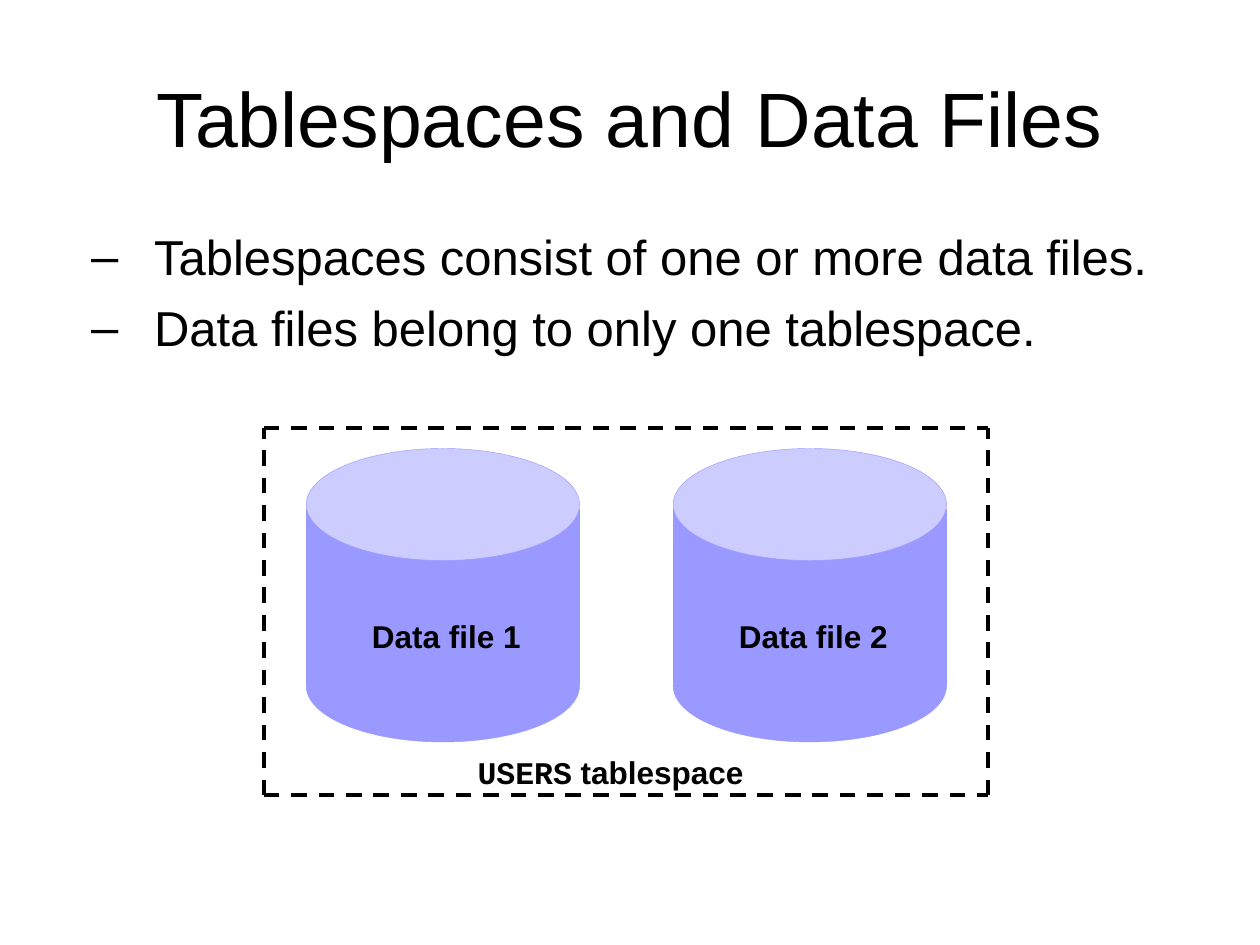
from lxml.etree import SubElement
from pptx import Presentation
from pptx.dml.color import RGBColor
from pptx.enum.dml import MSO_LINE
from pptx.enum.shapes import MSO_CONNECTOR, MSO_SHAPE
from pptx.enum.text import MSO_ANCHOR, PP_ALIGN
from pptx.oxml.ns import qn
from pptx.util import Pt

BLACK, SIDE, LID = "000000", "9999FF", "CCCCFF"
LABEL = {"size": Pt(18), "bold": True}
CYLINDER_WIDTH = 156.2
LABEL_MARGINS = {"margin_left": Pt(4.5), "margin_right": Pt(4.5),
                 "margin_top": Pt(2.2), "margin_bottom": Pt(2.2)}


def rgb(value):
    return RGBColor.from_string(value)


def set_all(target, values):
    for name, value in values.items():
        setattr(target, name, value)


def add_run(paragraph, text, font="Arial", **style):
    run = paragraph.add_run()
    run.text = text
    set_all(run.font, {"name": font, **style})
    run.font.color.rgb = rgb(BLACK)


def place(shape, left, top, width, height):
    set_all(shape, {"left": Pt(left), "top": Pt(top),
                    "width": Pt(width), "height": Pt(height)})


def add_title(slide, text):
    title = slide.shapes.title
    place(title, 36, 21.6, 648, 90)
    title.text_frame.vertical_anchor = MSO_ANCHOR.MIDDLE
    paragraph = title.text_frame.paragraphs[0]
    paragraph.alignment = PP_ALIGN.CENTER
    add_run(paragraph, text, size=Pt(44))


def add_dashed_list(slide, items):
    frame = slide.shapes.add_textbox(Pt(36), Pt(126), Pt(648), Pt(146)).text_frame
    frame.word_wrap = True
    for number, item in enumerate(items):
        paragraph = frame.add_paragraph() if number else frame.paragraphs[0]
        paragraph.space_before = Pt(7)
        properties = paragraph._p.get_or_add_pPr()
        properties.set("marL", str(Pt(45)))
        properties.set("indent", str(Pt(-36)))
        SubElement(properties, qn("a:buFont"), typeface="Arial")
        SubElement(properties, qn("a:buChar"), char="–")
        add_run(paragraph, item, size=Pt(28))


def add_solid(slide, preset, left, top, height, fill):
    part = slide.shapes.add_shape(preset, Pt(left), Pt(top),
                                  Pt(CYLINDER_WIDTH), Pt(height))
    part.shadow.inherit = False
    part.fill.solid()
    part.fill.fore_color.rgb = rgb(fill)
    part.line.color.rgb = rgb(SIDE)
    part.line.width = Pt(0.25)


def add_cylinder(slide, left):
    add_solid(slide, MSO_SHAPE.RECTANGLE, left, 291, 100, SIDE)
    add_solid(slide, MSO_SHAPE.OVAL, left, 256.3, 64, LID)
    add_solid(slide, MSO_SHAPE.OVAL, left, 360, 64, SIDE)


def add_dashed_frame(slide, left, top, right, bottom):
    edges = [(left, bottom, right, bottom), (left, top, right, top),
             (left, bottom, left, top), (right, bottom, right, top)]
    for edge in edges:
        side = slide.shapes.add_connector(MSO_CONNECTOR.STRAIGHT, *map(Pt, edge))
        side.line.color.rgb = rgb(BLACK)
        set_all(side.line, {"width": Pt(2.25), "dash_style": MSO_LINE.DASH})
        SubElement(side._element.spPr, qn("a:effectLst"))


def add_label(slide, left, top, width, *parts):
    """Add a centred bold label from (text, font) parts."""
    frame = slide.shapes.add_textbox(Pt(left), Pt(top), Pt(width), Pt(23)).text_frame
    set_all(frame, {"word_wrap": True, **LABEL_MARGINS})
    paragraph = frame.paragraphs[0]
    set_all(paragraph, {"alignment": PP_ALIGN.CENTER, "line_spacing": 0.85})
    for text, font in parts:
        add_run(paragraph, text, font, **LABEL)


def main():
    deck = Presentation()
    set_all(deck, {"slide_width": Pt(720), "slide_height": Pt(540)})
    slide = deck.slides.add_slide(deck.slide_layouts[5])

    add_title(slide, "Tablespaces and Data Files")
    add_dashed_list(slide, ["Tablespaces consist of one or more data files.",
                            "Data files belong to only one tablespace."])
    data_files = {"Data file 1": 175, "Data file 2": 384.7}
    for left in data_files.values():
        add_cylinder(slide, left)
    add_dashed_frame(slide, 150.7, 244.6, 564.7, 454.4)
    add_label(slide, 247, 431.3, 203.8, ("USERS", "Courier New"),
              (" tablespace", "Arial"))
    for name, left in data_files.items():
        add_label(slide, left + 22.5, 353.5, 115.2, (name, "Arial"))

    deck.save("out.pptx")


if __name__ == "__main__":
    main()
